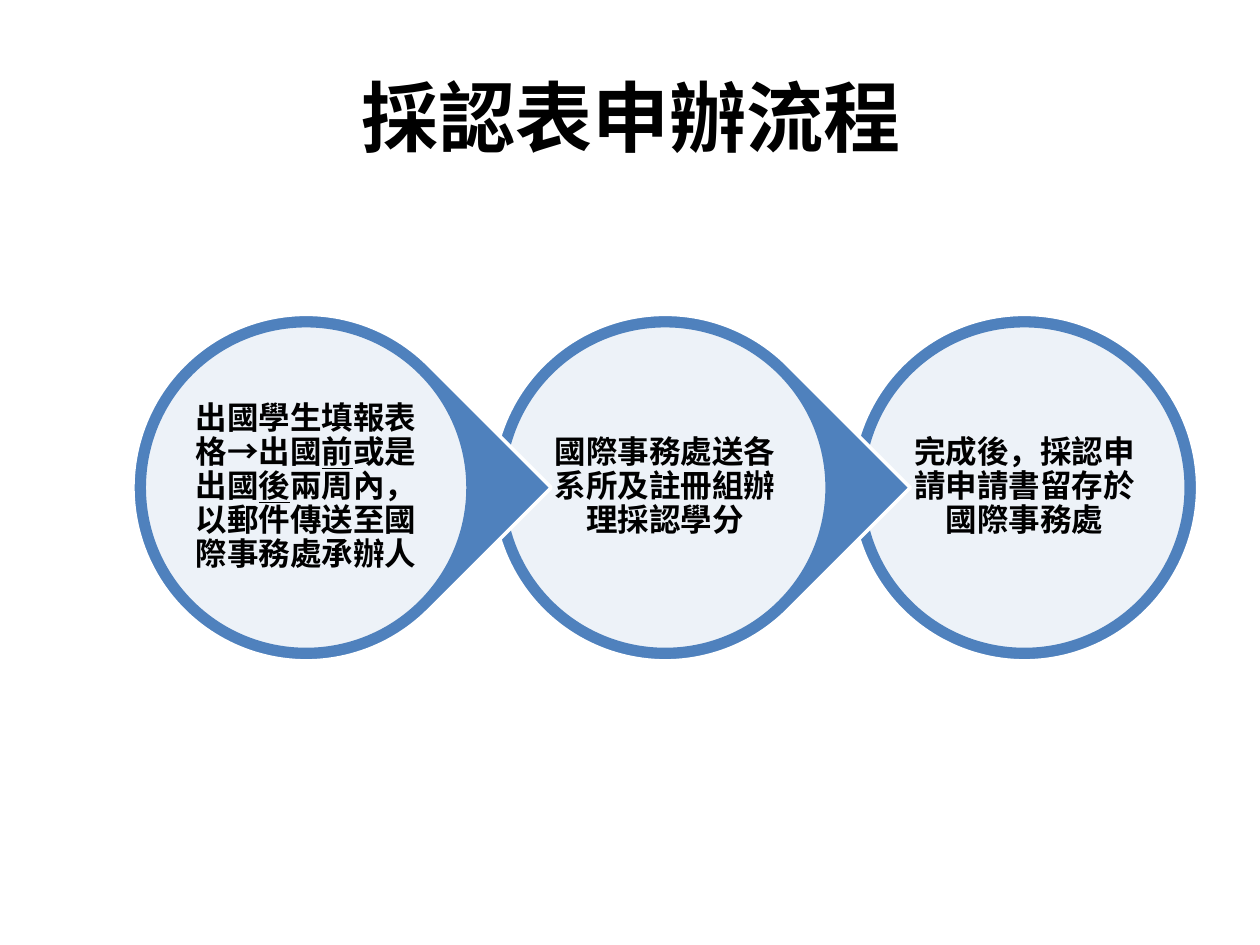
from lxml import etree
from pptx import Presentation
from pptx.dml.color import RGBColor
from pptx.enum.shapes import MSO_SHAPE
from pptx.enum.text import MSO_ANCHOR, PP_ALIGN
from pptx.oxml.ns import qn
from pptx.util import Inches, Pt

TEARDROP, ELLIPSE = MSO_SHAPE.TEAR, MSO_SHAPE.OVAL
MIDDLE, CENTER = MSO_ANCHOR.MIDDLE, PP_ALIGN.CENTER

TITLE = "採認表申辦流程"
# Each step is a list of (text, underlined) runs.
STEPS = [
    [("出國學生填報表格→出國", False), ("前", True), ("或是出國", False),
     ("後", True), ("兩周內，以郵件傳送至國際事務處承辦人", False)],
    [("國際事務處送各系所及註冊組辦理採認學分", False)],
    [("完成後，採認申請申請書留存於國際事務處", False)],
]
COLORS = {"blue": "4F81BD", "white": "FFFFFF", "black": "000000"}
TITLE_FONT, STEP_FONT = "Calibri", "Noto Sans CJK SC"

SLIDE_W, SLIDE_H = 10, 7.5
FIRST_CENTER_X, CENTER_Y = 2.43, 3.87
STEP_PITCH = 2.85
OUTER, INNER, LABEL = 2.75, 2.57, 1.84
INSET = 0.03
DISC_OPACITY = 90


def rgb(name):
    return RGBColor.from_string(COLORS[name])


def centered_box(center_x, size):
    return [Inches(v) for v in (center_x - size / 2, CENTER_Y - size / 2, size, size)]


def add_disc(slide, kind, center_x, size, fill, line):
    disc = slide.shapes.add_shape(kind, *centered_box(center_x, size))
    disc.shadow.inherit = False
    disc.fill.solid()
    disc.fill.fore_color.rgb = rgb(fill)
    disc.line.color.rgb = rgb(line)
    disc.line.width = Pt(2)
    return disc


def set_opacity(shape, percent):
    color = shape.fill._xPr.find(qn("a:solidFill"))[0]
    etree.SubElement(color, qn("a:alpha"), val=str(percent * 1000))


def add_run(paragraph, text, size, typeface):
    run = paragraph.add_run()
    run.text = text
    run.font.size = Pt(size)
    run.font.bold = True
    run.font.name = typeface
    run.font.color.rgb = rgb("black")
    return run


def add_label(slide, center_x, runs):
    frame = slide.shapes.add_textbox(*centered_box(center_x, LABEL)).text_frame
    frame.word_wrap = True
    frame.vertical_anchor = MIDDLE
    frame.margin_left = frame.margin_right = Inches(INSET)
    frame.margin_top = frame.margin_bottom = Inches(INSET)
    paragraph = frame.paragraphs[0]
    paragraph.alignment = CENTER
    paragraph.line_spacing = 0.9
    for text, underlined in runs:
        run = add_run(paragraph, text, 18, STEP_FONT)
        run.font.underline = underlined
        latin = run.font._element.find(qn("a:latin"))
        latin.addnext(latin.makeelement(qn("a:ea"), {"typeface": STEP_FONT}))


def add_title(slide):
    title = slide.shapes.title
    title.left, title.top = Inches(0.51), Inches(0.29)
    title.width, title.height = Inches(9), Inches(1.25)
    title.text_frame.vertical_anchor = MIDDLE
    paragraph = title.text_frame.paragraphs[0]
    paragraph.alignment = CENTER
    add_run(paragraph, TITLE, 44, TITLE_FONT)


def main():
    prs = Presentation()
    prs.slide_width, prs.slide_height = Inches(SLIDE_W), Inches(SLIDE_H)
    slide = prs.slides.add_slide(prs.slide_layouts[5])
    add_title(slide)

    # Later steps go behind, so each pointer overlaps the next step.
    last = len(STEPS) - 1
    for index in range(last, -1, -1):
        center_x = FIRST_CENTER_X + index * STEP_PITCH
        kind = ELLIPSE if index == last else TEARDROP
        outer = add_disc(slide, kind, center_x, OUTER, "blue", "white")
        if kind == TEARDROP:
            outer.rotation = 45
        inner = add_disc(slide, ELLIPSE, center_x, INNER, "white", "blue")
        set_opacity(inner, DISC_OPACITY)
        add_label(slide, center_x, STEPS[index])

    prs.save("out.pptx")


if __name__ == "__main__":
    main()
